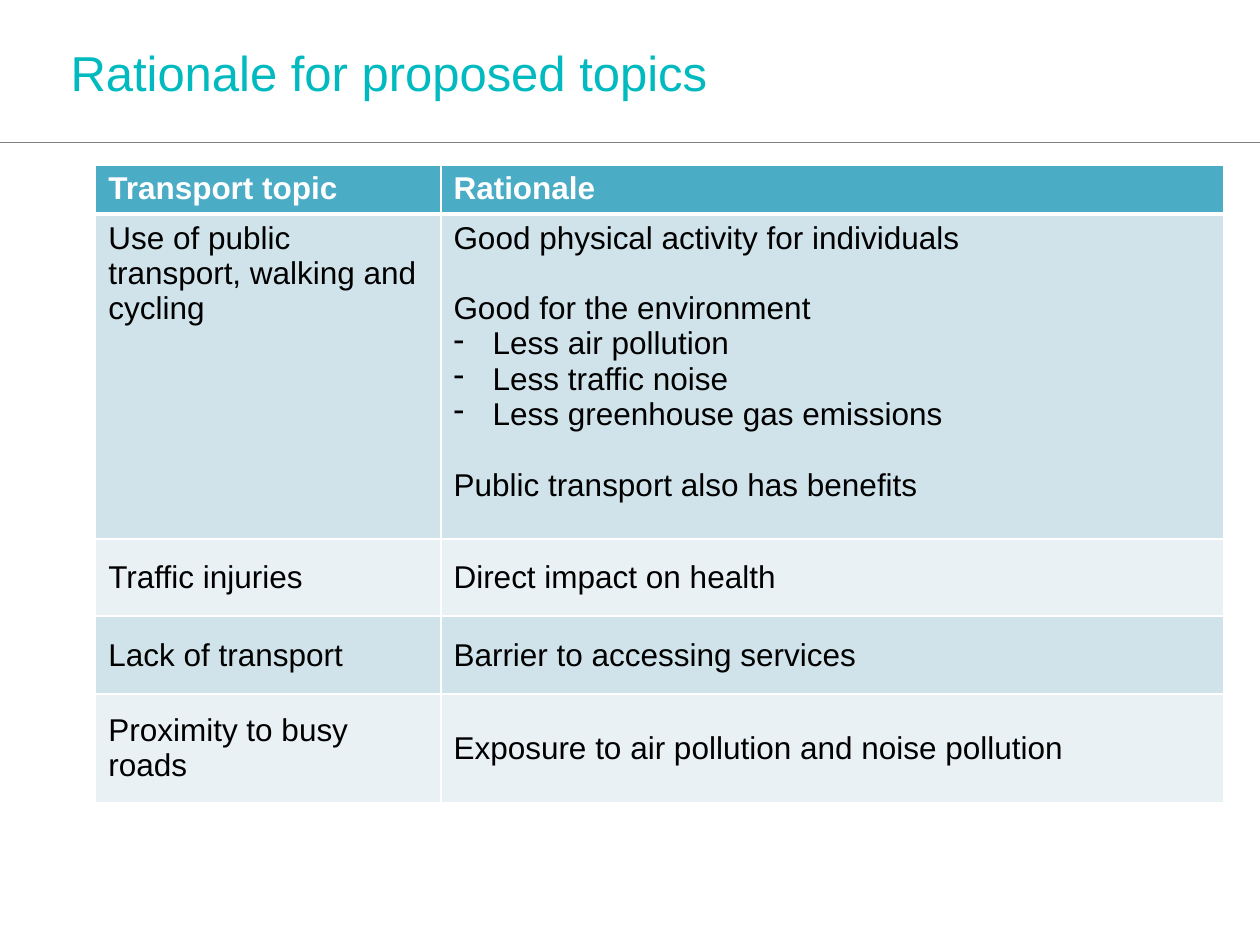
from lxml.etree import SubElement
from pptx import Presentation
from pptx.dml.color import RGBColor
from pptx.enum.shapes import MSO_CONNECTOR
from pptx.enum.text import MSO_ANCHOR, PP_ALIGN
from pptx.oxml import parse_xml
from pptx.oxml.ns import nsdecls, qn
from pptx.util import Inches, Pt

BLANK_LINE = Pt(20.2)
COLUMN_WIDTHS = [2.74, 6.21]
ROW_HEIGHTS = [0.39, 2.58, 0.61, 0.62, 0.86]
BANDS = ["D0E3EA", "E9F1F5"]
BENEFITS = [
    ("Good physical activity for individuals", {}),
    ("Good for the environment", {"space_before": BLANK_LINE}),
    ("Less air pollution", {"dash": True}),
    ("Less traffic noise", {"dash": True}),
    ("Less greenhouse gas emissions", {"dash": True}),
    ("Public transport also has benefits", {"space_before": BLANK_LINE}),
]
TOPICS = [
    ("Transport topic", [("Rationale", {})]),
    ("Use of public transport, walking and cycling", BENEFITS),
    ("Traffic injuries", [("Direct impact on health", {})]),
    ("Lack of transport", [("Barrier to accessing services", {})]),
    ("Proximity to busy roads", [("Exposure to air pollution and noise pollution", {})]),
]


def color(value):
    return RGBColor.from_string(value)


def apply(target, values):
    for name, value in values.items():
        setattr(target, name, value)


def write_run(paragraph, text, size, hue, bold=False):
    run = paragraph.add_run()
    run.text = text
    apply(run.font, {"name": "Arial", "size": Pt(size), "bold": bold})
    run.font.color.rgb = color(hue)


def add_dash(paragraph):
    properties = paragraph._p.get_or_add_pPr()
    properties.set("marL", str(Inches(0.31)))
    properties.set("indent", str(-Inches(0.31)))
    SubElement(properties, qn("a:buChar")).set("char", "-")


def add_title(slide):
    title = slide.shapes.title
    apply(title, {"left": Inches(0.46), "top": Inches(0.29),
                  "width": Inches(9.54), "height": Inches(0.79)})
    apply(title.text_frame, {"vertical_anchor": MSO_ANCHOR.TOP, "word_wrap": True})
    heading = title.text_frame.paragraphs[0]
    heading.alignment = PP_ALIGN.LEFT
    write_run(heading, "Rationale for proposed topics", 28, "00BABF")


def add_divider(slide):
    divider = slide.shapes.add_connector(
        MSO_CONNECTOR.STRAIGHT, 0, Inches(1.13), Inches(10), Inches(1.13))
    divider.line.color.rgb = color("808080")
    divider.line.width = Pt(0.25)
    SubElement(divider._element.spPr, qn("a:effectLst"))


def add_borders(cell, top, bottom):
    properties = cell._tc.get_or_add_tcPr()
    widths = {"lnL": 1, "lnR": 1, "lnT": top, "lnB": bottom}
    for position, (side, width) in enumerate(widths.items()):
        properties.insert(position, parse_xml(
            f'<a:{side} {nsdecls("a")} w="{Pt(width)}"><a:solidFill>'
            f'<a:srgbClr val="FFFFFF"/></a:solidFill></a:{side}>'))


def fill_cell(cell, lines, row):
    header = row == 0
    cell.fill.solid()
    cell.fill.fore_color.rgb = color("4BACC6" if header else BANDS[(row - 1) % 2])
    cell.vertical_anchor = MSO_ANCHOR.MIDDLE if row > 1 else MSO_ANCHOR.TOP
    add_borders(cell, 3 if row == 1 else 1, 3 if header else 1)
    for index, (text, layout) in enumerate(lines):
        frame = cell.text_frame
        paragraph = frame.add_paragraph() if index else frame.paragraphs[0]
        if "dash" in layout:
            add_dash(paragraph)
        else:
            apply(paragraph, layout)
        write_run(paragraph, text, 18, "FFFFFF" if header else "000000", header)


def add_topics(slide):
    table = slide.shapes.add_table(
        len(TOPICS), len(COLUMN_WIDTHS), Inches(0.76), Inches(1.31),
        Inches(sum(COLUMN_WIDTHS)), Inches(sum(ROW_HEIGHTS))).table
    for column, width in zip(table.columns, COLUMN_WIDTHS):
        column.width = Inches(width)
    for row, (topic, rationale) in enumerate(TOPICS):
        table.rows[row].height = Inches(ROW_HEIGHTS[row])
        fill_cell(table.cell(row, 0), [(topic, {})], row)
        fill_cell(table.cell(row, 1), rationale, row)


def main():
    deck = Presentation()
    apply(deck, {"slide_width": Inches(10), "slide_height": Inches(7.5)})
    slide = deck.slides.add_slide(deck.slide_layouts[5])
    add_divider(slide)
    add_title(slide)
    add_topics(slide)
    deck.save("out.pptx")


if __name__ == "__main__":
    main()
